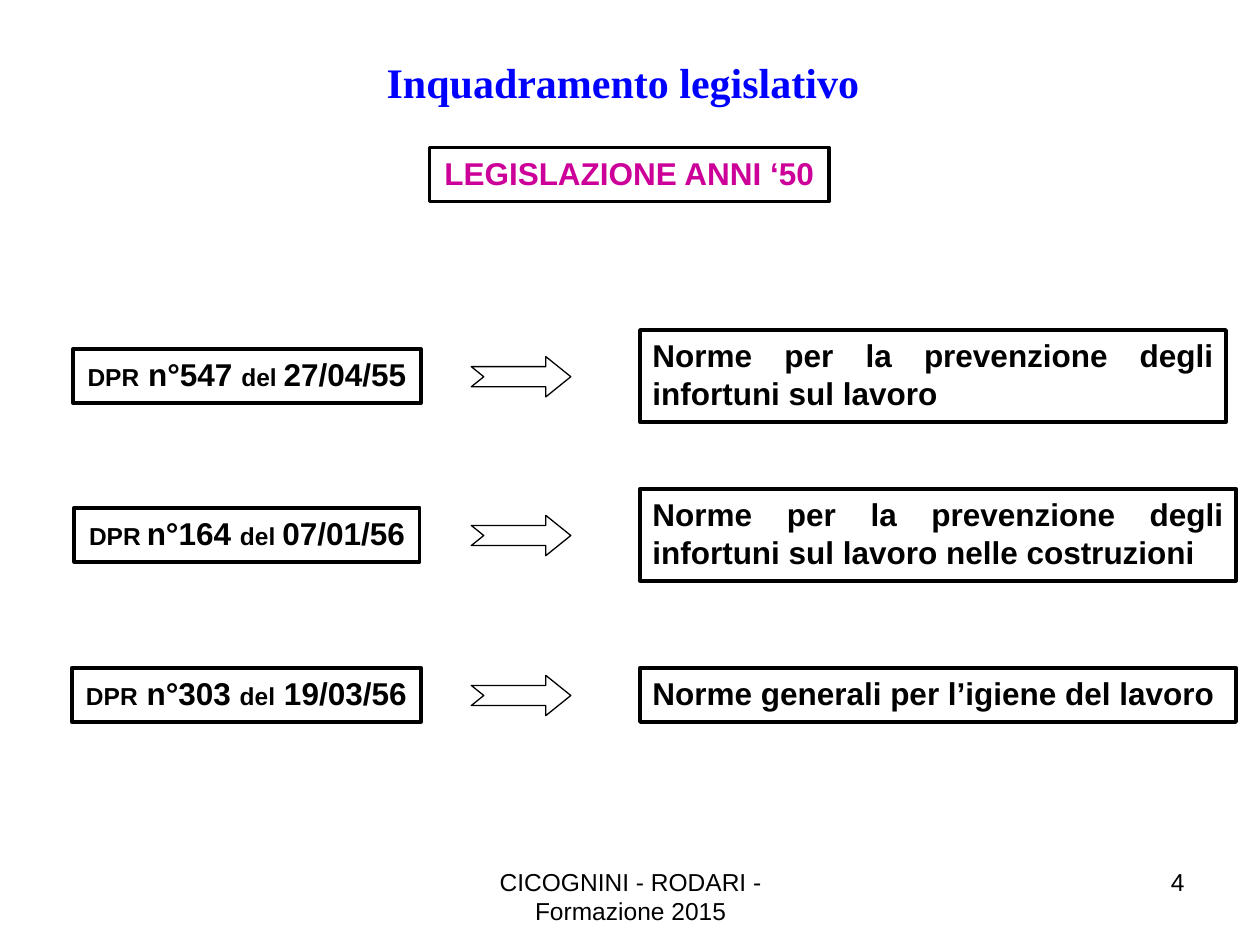
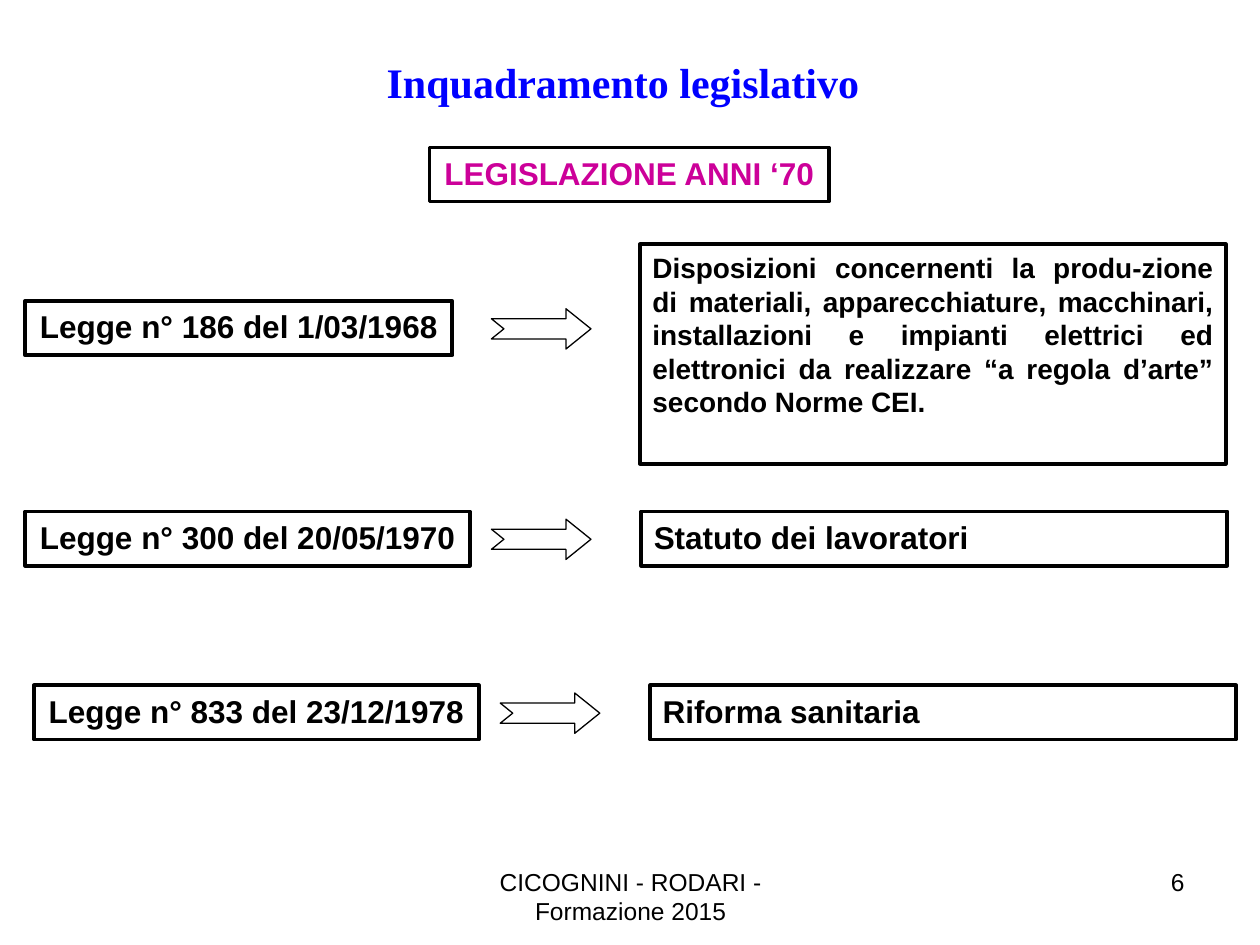
from dataclasses import dataclass

from pptx import Presentation
from pptx.dml.color import RGBColor
from pptx.enum.shapes import MSO_SHAPE
from pptx.enum.text import MSO_ANCHOR, PP_ALIGN
from pptx.util import Pt

EMU_PER_PX = 9144  # 100 px to the inch
TITLE_ONLY_LAYOUT = 5


@dataclass(frozen=True)
class Theme:
    black: RGBColor = RGBColor(0, 0, 0)
    white: RGBColor = RGBColor(255, 255, 255)
    title_blue: RGBColor = RGBColor(0, 0, 255)
    heading_pink: RGBColor = RGBColor(204, 0, 153)
    title_font: str = "Times New Roman"
    body_font: str = "Arial"
    title_size: int = 24
    body_size: int = 18
    long_text_size: int = 16
    small_size: int = 14
    tiny_size: int = 12
    heading_line: float = 2
    box_line: float = 2.25
    arrow_line: float = 0.75


THEME = Theme()


@dataclass(frozen=True)
class Area:
    left: int
    top: int
    width: int
    height: int = 43

    def emu(self) -> tuple[int, ...]:
        return tuple(
            px * EMU_PER_PX for px in (self.left, self.top, self.width, self.height)
        )


@dataclass(frozen=True)
class TextPiece:
    text: str
    size: int = THEME.body_size
    color: RGBColor = THEME.black
    font: str = THEME.body_font
    bold: bool = True


@dataclass(frozen=True)
class Law:
    label: Area
    label_pieces: list[TextPiece]
    arrow_left: int
    subject: Area
    subject_piece: TextPiece


@dataclass(frozen=True)
class LawSlide:
    heading: str
    number: str
    laws: list[Law]


TITLE_AREA = Area(156, 40, 685, 50)
HEADING_AREA = Area(341, 117, 317)
FOOTER_AREA = Area(342, 683, 317, 52)
NUMBER_AREA = Area(717, 683, 233, 52)
ARROW_OFFSET, ARROW_WIDTH, ARROW_HEIGHT = 6, 79, 32
FOOTER_TEXT = "CICOGNINI - RODARI - Formazione 2015"


def small(text: str) -> TextPiece:
    return TextPiece(text, THEME.small_size)


SLIDES = [
    LawSlide("LEGISLAZIONE ANNI ‘50", "4", [
        Law(
            Area(58, 277, 276),
            [small("DPR"), TextPiece(" n°547 "), small("del "), TextPiece("27/04/55")],
            374,
            Area(508, 262, 465, 73),
            TextPiece("Norme per la prevenzione degli infortuni sul lavoro"),
        ),
        Law(
            Area(59, 403, 274),
            [small("DPR"), TextPiece(" ", THEME.tiny_size), TextPiece("n°164 "),
             small("del "), TextPiece("07/01/56")],
            374,
            Area(508, 388, 473, 73),
            TextPiece("Norme per la prevenzione degli infortuni sul lavoro"
                      " nelle costruzioni"),
        ),
        Law(
            Area(57, 530, 277),
            [small("DPR"), TextPiece(" n°303 "), small("del"), TextPiece(" 19/03/56")],
            374,
            Area(508, 530, 473),
            TextPiece("Norme generali per l’igiene del lavoro"),
        ),
    ]),
    LawSlide("LEGISLAZIONE ANNI ‘70", "6", [
        Law(
            Area(20, 239, 339),
            [TextPiece("Legge n° 186 del 1/03/1968")],
            390,
            Area(508, 194, 465, 174),
            TextPiece(
                "Disposizioni concernenti la produ-zione di materiali, "
                "apparecchiature, macchinari, installazioni e impianti elettrici "
                "ed elettronici da realizzare “a regola d’arte” secondo Norme CEI.",
                THEME.long_text_size,
            ),
        ),
        Law(
            Area(20, 406, 353),
            [TextPiece("Legge n° 300 del 20/05/1970")],
            390,
            Area(509, 406, 465),
            TextPiece("Statuto dei lavoratori"),
        ),
        Law(
            Area(27, 544, 353),
            [TextPiece("Legge n° 833 del 23/12/1978")],
            397,
            Area(516, 544, 465),
            TextPiece("Riforma sanitaria"),
        ),
    ]),
]


def write_text(shape, pieces: list[TextPiece], alignment, wrap: bool = True):
    """Fill the first paragraph of a shape and return it."""
    frame = shape.text_frame
    frame.word_wrap = wrap
    frame.vertical_anchor = MSO_ANCHOR.TOP
    paragraph = frame.paragraphs[0]
    paragraph.alignment = alignment
    for piece in pieces:
        run = paragraph.add_run()
        run.text = piece.text
        run.font.name = piece.font
        run.font.size = Pt(piece.size)
        run.font.bold = piece.bold
        run.font.color.rgb = piece.color
    return paragraph


def add_outlined(slide, kind: MSO_SHAPE, area: Area, line_width: float):
    shape = slide.shapes.add_shape(kind, *area.emu())
    shape.shadow.inherit = False
    shape.fill.background()
    shape.line.color.rgb = THEME.black
    shape.line.width = Pt(line_width)
    return shape


def add_box(slide, area: Area, pieces: list[TextPiece], alignment,
            wrap: bool = False, line_width: float = THEME.box_line) -> None:
    box = add_outlined(slide, MSO_SHAPE.RECTANGLE, area, line_width)
    write_text(box, pieces, alignment, wrap)


def add_arrow(slide, left: int, top: int) -> None:
    area = Area(left, top, ARROW_WIDTH, ARROW_HEIGHT)
    arrow = add_outlined(slide, MSO_SHAPE.NOTCHED_RIGHT_ARROW, area, THEME.arrow_line)
    arrow.fill.solid()
    arrow.fill.fore_color.rgb = THEME.white
    arrow.adjustments[0] = 0.5
    arrow.adjustments[1] = 0.62


def add_footer_text(slide, area: Area, text: str, alignment) -> None:
    text_box = slide.shapes.add_textbox(*area.emu())
    write_text(text_box, [TextPiece(text, THEME.small_size, bold=False)], alignment)


def add_title(slide) -> None:
    title = slide.shapes.title
    title.left, title.top, title.width, title.height = TITLE_AREA.emu()
    piece = TextPiece("Inquadramento legislativo ", THEME.title_size,
                      THEME.title_blue, THEME.title_font)
    paragraph = write_text(title, [piece], PP_ALIGN.CENTER)
    paragraph.space_before = Pt(2)


def add_law(slide, law: Law) -> None:
    add_arrow(slide, law.arrow_left, law.label.top + ARROW_OFFSET)
    add_box(slide, law.label, law.label_pieces, PP_ALIGN.CENTER)
    add_box(slide, law.subject, [law.subject_piece], PP_ALIGN.JUSTIFY, wrap=True)


def build_slide(presentation, content: LawSlide) -> None:
    slide = presentation.slides.add_slide(
        presentation.slide_layouts[TITLE_ONLY_LAYOUT])
    # Shared frame: footer, number, title
    add_footer_text(slide, FOOTER_AREA, FOOTER_TEXT, PP_ALIGN.CENTER)
    add_footer_text(slide, NUMBER_AREA, content.number, PP_ALIGN.RIGHT)
    add_title(slide)
    # Decade heading and its laws
    heading = TextPiece(content.heading, color=THEME.heading_pink)
    add_box(slide, HEADING_AREA, [heading], PP_ALIGN.CENTER,
            line_width=THEME.heading_line)
    for law in content.laws:
        add_law(slide, law)


def main() -> None:
    presentation = Presentation()
    presentation.slide_width = 1000 * EMU_PER_PX
    presentation.slide_height = 750 * EMU_PER_PX
    for content in SLIDES:
        build_slide(presentation, content)
    presentation.save("out.pptx")


if __name__ == "__main__":
    main()
